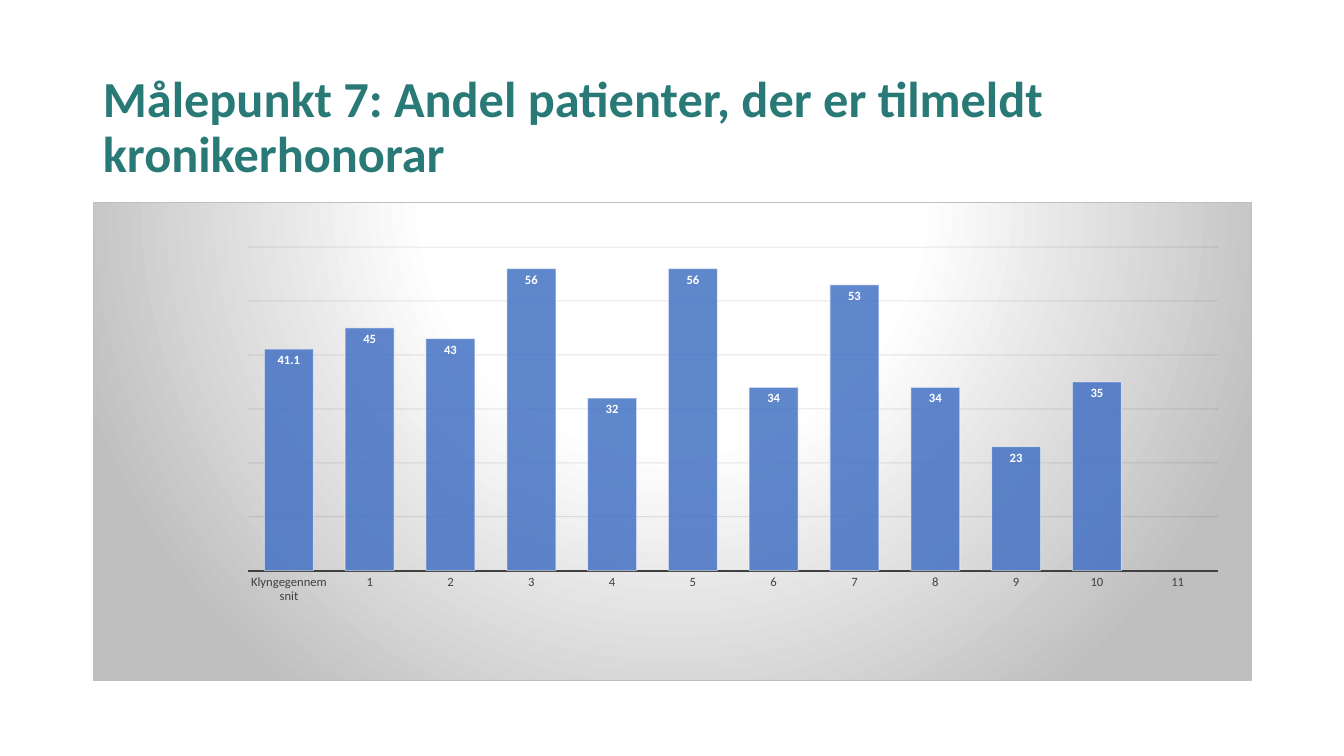
from pptx import Presentation
from pptx.chart.data import CategoryChartData
from pptx.dml.color import RGBColor
from pptx.enum.chart import XL_CHART_TYPE, XL_LABEL_POSITION, XL_TICK_MARK
from pptx.enum.text import MSO_ANCHOR, MSO_AUTO_SIZE, PP_ALIGN
from pptx.oxml import parse_xml
from pptx.oxml.ns import nsdecls, qn
from pptx.util import Inches, Pt

COLUMN = XL_CHART_TYPE.COLUMN_CLUSTERED
INSIDE = XL_LABEL_POSITION.INSIDE_END
NO_TICK = XL_TICK_MARK.NONE
MIDDLE = MSO_ANCHOR.MIDDLE
NO_FIT = MSO_AUTO_SIZE.NONE
LEFT = PP_ALIGN.LEFT

FACE = "Calibri"
LEFT_EDGE, WIDTH = 0.92, 11.5
TITLE = "Målepunkt 7: Andel patienter, der er tilmeldt kronikerhonorar"
GROUPS = ["Klyngegennemsnit"] + [str(n) for n in range(1, 12)]
SHARES = [41.1, 45, 43, 56, 32, 56, 34, 53, 34, 23, 35, None]
PLOT = {"x": 0.134, "y": 0.094, "w": 0.837, "h": 0.676}


def color(code):
    """Turn a hex string into a colour."""
    return RGBColor.from_string(code)


def set_font(font, size, code, bold=False):
    """Set face, size, colour and weight of a font."""
    font.name = FACE
    font.size = Pt(size)
    font.bold = bold
    font.color.rgb = color(code)


def set_fill(fill, code, alpha=100):
    """Give a fill one colour with the given opacity in percent."""
    fill.solid()
    fill.fore_color.rgb = color(code)
    if alpha < 100:
        tint = fill._xPr.find(".//" + qn("a:srgbClr"))
        tint.append(parse_xml(f'<a:alpha {nsdecls("a")} val="{alpha * 1000}"/>'))


def set_line(line, code, width, alpha=100):
    """Set colour, width and opacity of a line."""
    line.width = Pt(width)
    set_fill(line.fill, code, alpha)


def set_back(chart):
    """Give the chart area a round gradient and a thin border."""
    stops = "".join(
        f'<a:gs pos="{place * 1000}"><a:srgbClr val="{code}"/></a:gs>'
        for place, code in [(0, "FFFFFF"), (39, "FFFFFF"), (100, "BFBFBF")]
    )
    back = parse_xml(
        f'<c:spPr {nsdecls("c", "a")}><a:gradFill><a:gsLst>{stops}</a:gsLst>'
        '<a:path path="circle"><a:fillToRect l="50000" t="-80000" '
        'r="50000" b="180000"/></a:path></a:gradFill>'
        '<a:ln w="9525"><a:solidFill><a:srgbClr val="BFBFBF"/></a:solidFill>'
        '</a:ln></c:spPr>'
    )
    chart._chartSpace.find(qn("c:chart")).addnext(back)


def set_plot(chart):
    """Place the inner plot area by its shares of the chart."""
    area = chart._chartSpace.find(".//" + qn("c:plotArea"))
    for old in area.findall(qn("c:layout")):
        area.remove(old)
    modes = "".join(f'<c:{key}Mode val="edge"/>' for key in "xy")
    sizes = "".join(f'<c:{key} val="{part}"/>' for key, part in PLOT.items())
    area.insert(0, parse_xml(
        f'<c:layout {nsdecls("c")}><c:manualLayout>'
        f'<c:layoutTarget val="inner"/>{modes}{sizes}'
        '</c:manualLayout></c:layout>'
    ))


def set_axes(chart):
    """Style the group axis and hide the value axis but for its grid."""
    groups, values = chart.category_axis, chart.value_axis
    groups.major_tick_mark = groups.minor_tick_mark = NO_TICK
    set_font(groups.tick_labels.font, 9, "404040")
    set_line(groups.format.line, "404040", 1.5)
    values.minimum_scale, values.maximum_scale = 0, 60
    values.major_unit = 10
    values.has_major_gridlines = True
    set_line(values.major_gridlines.format.line, "0D0D0D", 0.75, 10)
    values.visible = False


def set_bars(plot):
    """Style the columns and their value labels."""
    plot.gap_width = 65
    plot.vary_by_categories = False
    bars = plot.series[0]
    set_fill(bars.format.fill, "4472C4", 85)
    set_line(bars.format.line, "FFFFFF", 0.75, 50)
    labels = bars.data_labels
    labels.show_value = True
    labels.position = INSIDE
    set_font(labels.font, 9, "FFFFFF", True)


def add_title(slide):
    """Fill and place the title."""
    title = slide.shapes.title
    title.left, title.top = Inches(LEFT_EDGE), Inches(0.55)
    title.width, title.height = Inches(WIDTH), Inches(1.45)
    frame = title.text_frame
    frame.text = TITLE
    frame.word_wrap = True
    frame.auto_size = NO_FIT
    frame.vertical_anchor = MIDDLE
    line = frame.paragraphs[0]
    line.alignment = LEFT
    line.line_spacing = 0.9
    set_font(line.font, 36, "297A77", True)


def add_chart(slide):
    """Add the column chart of shares per group."""
    data = CategoryChartData()
    data.categories = GROUPS
    data.add_series("Series 1", SHARES)
    chart = slide.shapes.add_chart(
        COLUMN, Inches(LEFT_EDGE), Inches(2), Inches(WIDTH), Inches(4.76), data
    ).chart
    chart.has_legend = False
    chart.has_title = False
    set_font(chart.font, 10, "000000")
    set_back(chart)
    set_plot(chart)
    set_axes(chart)
    set_bars(chart.plots[0])


def main():
    """Build and save the slide."""
    deck = Presentation()
    deck.slide_width, deck.slide_height = Inches(13.33), Inches(7.5)
    slide = deck.slides.add_slide(deck.slide_layouts[5])
    add_title(slide)
    add_chart(slide)
    deck.save("out.pptx")


if __name__ == "__main__":
    main()
